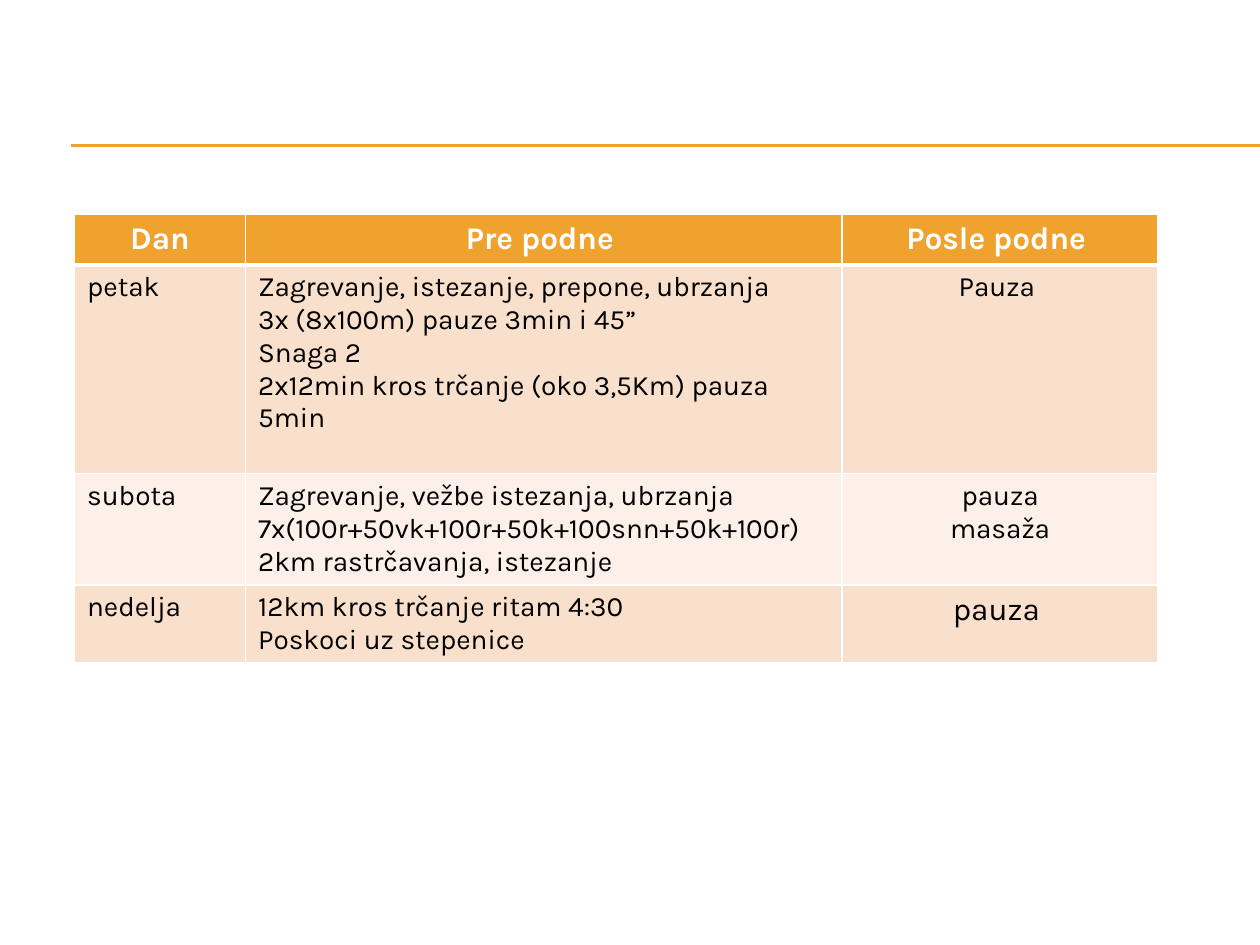
"""Build a slide with a three-day training plan table."""
from lxml import etree
from pptx import Presentation
from pptx.dml.color import RGBColor
from pptx.enum.shapes import MSO_CONNECTOR
from pptx.enum.text import PP_ALIGN
from pptx.oxml.ns import qn
from pptx.util import Pt

LINE = MSO_CONNECTOR.STRAIGHT
LEFT, MID = PP_ALIGN.LEFT, PP_ALIGN.CENTER
FONT = "Karla"
HEX = {"gold": "F0A22E", "peach": "F9E0CD", "cream": "FCF0E8",
       "white": "FFFFFF", "black": "000000"}


def color(name):
    return RGBColor.from_string(HEX[name])


def border(cell, sides):
    props = cell._tc.get_or_add_tcPr()
    for spot, (side, width) in enumerate(sides.items()):
        edge = etree.Element(qn(f"a:ln{side}"), w=str(Pt(width)))
        fill = etree.SubElement(edge, qn("a:solidFill"))
        etree.SubElement(fill, qn("a:srgbClr"), val=HEX["white"])
        props.insert(spot, edge)


deck = Presentation()
deck.slide_width, deck.slide_height = Pt(720), Pt(540)
slide = deck.slides.add_slide(deck.slide_layouts[6])

for top in (82.8, 83.5):
    rule = slide.shapes.add_connector(LINE, Pt(40.5), Pt(top), Pt(720), Pt(top))
    rule.line.color.rgb = color("gold")
    rule.line.width = Pt(0.75)
    etree.SubElement(rule._element.spPr, qn("a:effectLst"))

rows = [
    (28.8, "gold", [["Dan"], ["Pre podne "], ["Posle podne "]]),
    (119.3, "peach", [
        ["petak"],
        ["Zagrevanje, istezanje, prepone, ubrzanja",
         "3x (8x100m) pauze 3min i 45”",
         "Snaga 2",
         "2x12min kros trčanje (oko 3,5Km) pauza 5min"],
        ["Pauza "]]),
    (63.6, "cream", [
        ["subota"],
        ["Zagrevanje, vežbe istezanja, ubrzanja",
         "7x(100r+50vk+100r+50k+100snn+50k+100r)",
         "2km rastrčavanja, istezanje"],
        ["pauza", "masaža"]]),
    (44.3, "peach", [
        ["nedelja"],
        ["12km kros trčanje ritam 4:30", "Poskoci uz stepenice"],
        ["pauza "]]),
]
widths = (97.7, 341, 180.5)
tall = sum(row[0] for row in rows)
frame = slide.shapes.add_table(len(rows), len(widths), Pt(42.6), Pt(122.6),
                               Pt(sum(widths)), Pt(tall))
table = frame.table
table.horz_banding = False
for col, width in zip(table.columns, widths):
    col.width = Pt(width)

for r, (height, fill, texts) in enumerate(rows):
    table.rows[r].height = Pt(height)
    head = r == 0
    for c, lines in enumerate(texts):
        cell = table.cell(r, c)
        cell.fill.solid()
        cell.fill.fore_color.rgb = color(fill)
        border(cell, {"L": 1, "R": 1, "T": 3 if r == 1 else 1, "B": 3 if head else 1})
        big = head or (r, c) == (3, 2)
        for n, text in enumerate(lines):
            body = cell.text_frame
            para = body.add_paragraph() if n else body.paragraphs[0]
            para.alignment = MID if head or c == 2 else LEFT
            run = para.add_run()
            run.text = text
            run.font.name = FONT
            run.font.size = Pt(18 if big else 16)
            run.font.bold = head
            run.font.color.rgb = color("white" if head else "black")

deck.save("out.pptx")
